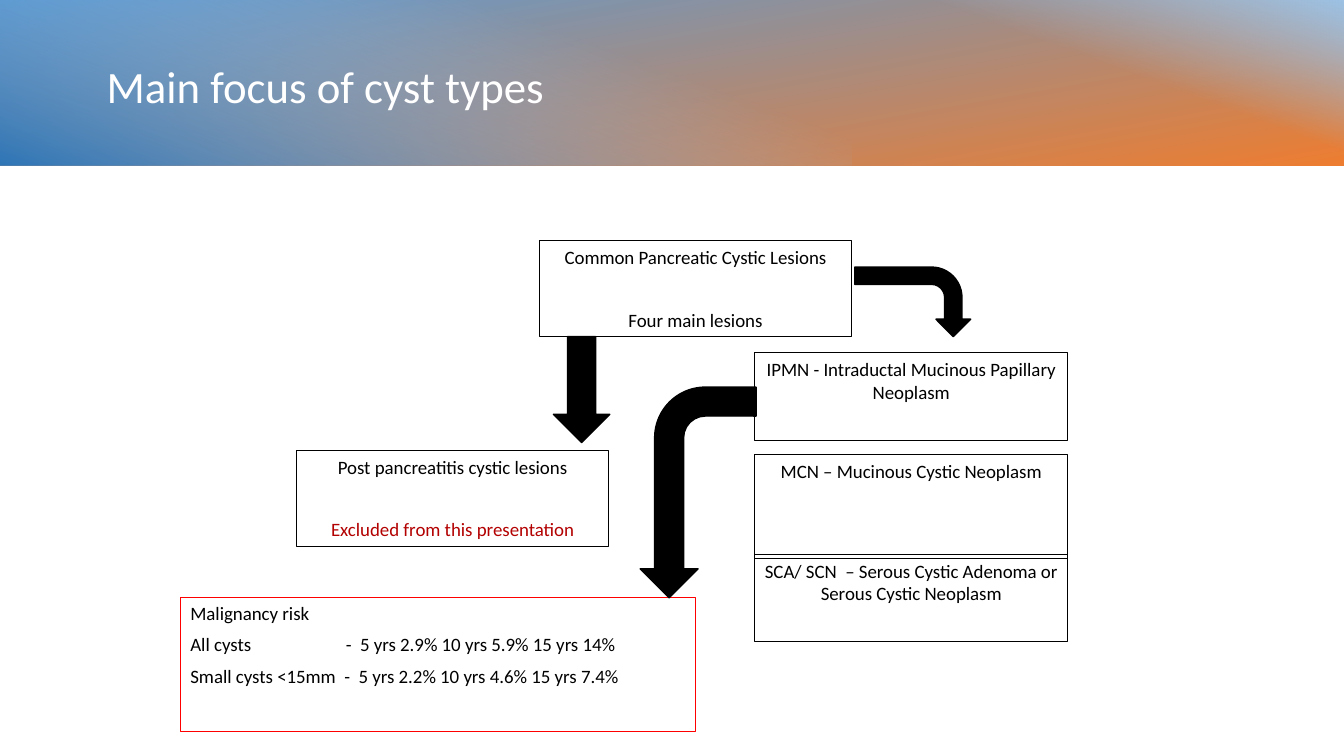
from dataclasses import dataclass

from lxml import etree
from pptx import Presentation
from pptx.dml.color import RGBColor
from pptx.enum import shapes, text
from pptx.oxml import ns
from pptx.util import Pt


@dataclass(frozen=True)
class Theme:
    font: str = "Calibri"
    title_size: float = 32
    body_size: float = 13.5
    white: str = "FFFFFF"
    black: str = "000000"
    red: str = "FF0000"
    dark_red: str = "B30000"
    blue: str = "5B9BD5"
    light_blue: str = "9DC3E6"
    deep_blue: str = "2E75B6"
    orange: str = "ED7D31"


theme = Theme()
rgb = RGBColor.from_string
Preset = shapes.MSO_SHAPE

deck = Presentation()
deck.slide_width, deck.slide_height = Pt(960), Pt(540)
page = deck.slides.add_slide(deck.slide_layouts[5])


def add_plain_shape(preset, left, top, width, height):
    shape = page.shapes.add_shape(preset, Pt(left), Pt(top), Pt(width), Pt(height))
    shape.shadow.inherit = False
    shape.fill.background()
    shape.line.fill.background()
    return shape


def style_paragraph(para, size, color, align):
    para.alignment = align
    para.font.name = theme.font
    para.font.size = Pt(size)
    para.font.color.rgb = rgb(color)


# Header band: a base gradient under two that fade in towards the corners.
# left, width, counterclockwise angle, start position, start and end colour, fades in
bands = [
    (0, 960, 280, 0, theme.blue, theme.orange, False),
    (562, 398, 70, 0.59, theme.light_blue, theme.light_blue, True),
    (0, 608, 250, 0.29, theme.light_blue, theme.deep_blue, True),
]
for left, width, angle, start, first_color, last_color, fades in bands:
    band = add_plain_shape(Preset.RECTANGLE, left, 0, width, 118)
    band.fill.gradient()
    band.fill.gradient_angle = angle
    first, last = band.fill.gradient_stops
    first.position, last.position = start, 1
    first.color.rgb, last.color.rgb = rgb(first_color), rgb(last_color)
    if fades:
        first_stop = next(band._element.iter(ns.qn("a:gs")))
        etree.SubElement(first_stop[0], ns.qn("a:alpha"), val="0")

title = page.shapes.title
title._element.getparent().append(title._element)
title.left, title.top, title.width, title.height = Pt(69), Pt(24), Pt(825), Pt(79)
title.text_frame.text = "Main focus of cyst types"
title.text_frame.auto_size = text.MSO_AUTO_SIZE.NONE
title.text_frame.vertical_anchor = text.MSO_ANCHOR.MIDDLE
title_para = title.text_frame.paragraphs[0]
title_para.line_spacing = 0.9
style_paragraph(title_para, theme.title_size, theme.white, text.PP_ALIGN.LEFT)

# Boxes: left, top, width, height, outline, alignment, gap after a line, lines with colours
BOX_WIDTH = 223.2
TYPES_LEFT = 539.3
CENTER, LEFT = text.PP_ALIGN.CENTER, text.PP_ALIGN.LEFT
boxes = [
    (TYPES_LEFT, 396, BOX_WIDTH, 62.6, theme.black, CENTER, 6,
     [("SCA/ SCN  – Serous Cystic Adenoma or Serous Cystic Neoplasm", theme.black)]),
    (211.7, 321.8, BOX_WIDTH, 68.4, theme.black, CENTER, 28.5,
     [("Post pancreatitis cystic lesions", theme.black),
      ("Excluded from this presentation", theme.dark_red)]),
    (TYPES_LEFT, 324.7, BOX_WIDTH, 74.2, theme.black, CENTER, 6,
     [("MCN – Mucinous Cystic Neoplasm", theme.black)]),
    (TYPES_LEFT, 252, BOX_WIDTH, 62.6, theme.black, CENTER, 6,
     [("IPMN - Intraductal Mucinous Papillary Neoplasm", theme.black)]),
    (385.2, 172.1, BOX_WIDTH, 68.4, theme.black, CENTER, 28.5,
     [("Common Pancreatic Cystic Lesions", theme.black),
      ("Four main lesions", theme.black)]),
    (128.9, 426.5, 367.9, 96.2, theme.red, LEFT, 6,
     [("Malignancy risk", theme.black),
      ("All cysts \t -  5 yrs 2.9% 10 yrs 5.9% 15 yrs 14%", theme.black),
      ("Small cysts <15mm  -  5 yrs 2.2% 10 yrs 4.6% 15 yrs 7.4%", theme.black)]),
]
for left, top, width, height, outline, align, gap, lines in boxes:
    box = add_plain_shape(Preset.RECTANGLE, left, top, width, height)
    box.line.color.rgb = rgb(outline)
    box.line.width = Pt(0.75)
    frame = box.text_frame
    frame.word_wrap = True
    frame.vertical_anchor = text.MSO_ANCHOR.TOP
    for index, (line, color) in enumerate(lines):
        para = frame.paragraphs[0] if index == 0 else frame.add_paragraph()
        para.text = line
        style_paragraph(para, theme.body_size, color, align)
        if index < len(lines) - 1:
            para.space_after = Pt(gap)
        if "\t" in line:
            tabs = etree.Element(ns.qn("a:tabLst"))
            etree.SubElement(tabs, ns.qn("a:tab"), pos=str(Pt(108)), algn="l")
            para._p.pPr.find(ns.qn("a:defRPr")).addprevious(tabs)

# Arrows: preset, left, top, width, height, rotation, flipped
arrows = [
    (Preset.DOWN_ARROW, 395.3, 240.5, 40.3, 75.6, 0, False),
    (Preset.BENT_ARROW, 627.1, 174.2, 49.7, 82.8, 90, False),
    (Preset.BENT_ARROW, 423.4, 310.3, 150.5, 82.8, 90, True),
]
for preset, left, top, width, height, rotation, flipped in arrows:
    arrow = add_plain_shape(preset, left, top, width, height)
    arrow.rotation = rotation
    arrow.fill.solid()
    arrow.fill.fore_color.rgb = rgb(theme.black)
    arrow.line.color.rgb = rgb(theme.black)
    arrow.line.width = Pt(1)
    if flipped:
        arrow._element.spPr.find(ns.qn("a:xfrm")).set("flipV", "1")

deck.save("out.pptx")
